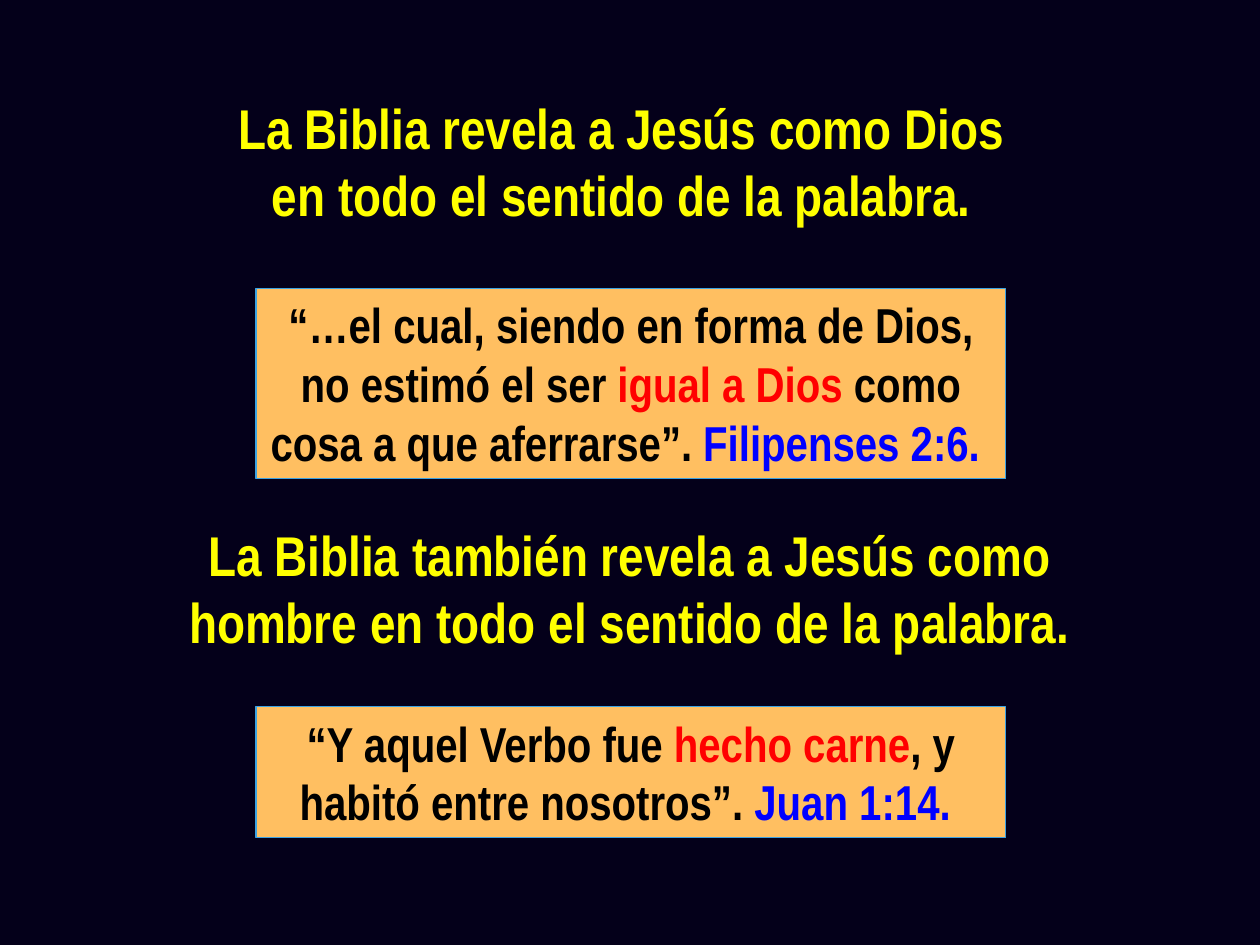
from typing import NamedTuple

from pptx import Presentation
from pptx.dml.color import RGBColor
from pptx.enum.shapes import MSO_SHAPE
from pptx.enum.text import MSO_ANCHOR, MSO_AUTO_SIZE, PP_ALIGN
from pptx.util import Pt

RECT = MSO_SHAPE.RECTANGLE
TOP = MSO_ANCHOR.TOP
GROW = MSO_AUTO_SIZE.SHAPE_TO_FIT_TEXT
CENTER = PP_ALIGN.CENTER

NAVY = RGBColor(0x04, 0x00, 0x1A)
YELLOW = RGBColor(0xFF, 0xFF, 0x00)
ORANGE = RGBColor(0xFF, 0xBF, 0x61)
SKY = RGBColor(0x3C, 0xA2, 0xE2)
BLACK = RGBColor(0x00, 0x00, 0x00)
RED = RGBColor(0xFF, 0x00, 0x00)
BLUE = RGBColor(0x00, 0x00, 0xFF)

FONT = "Arial Narrow"


class Box(NamedTuple):
    left: float
    top: float
    width: float
    height: float


class Span(NamedTuple):
    text: str
    color: RGBColor


class Verse(NamedTuple):
    top: float
    height: float
    spans: list[Span]


CLAIM_1 = "La Biblia revela a Jesús como Dios en todo el sentido de la palabra."
CLAIM_2 = ("La Biblia también revela a Jesús como hombre "
           "en todo el sentido de la palabra.")
VERSES = [
    Verse(164.9, 108.7, [
        Span("“…el cual, siendo en forma de Dios, no estimó el ser ", BLACK),
        Span("igual a Dios ", RED),
        Span("como cosa a que aferrarse”. ", BLACK),
        Span("Filipenses 2:6. ", BLUE),
    ]),
    Verse(403.9, 74.9, [
        Span("“Y aquel Verbo fue ", BLACK),
        Span("hecho carne", RED),
        Span(", y habitó entre nosotros”. ", BLACK),
        Span("Juan 1:14. ", BLUE),
    ]),
]


def write(shape, spans: list[Span], *, size: float, bold: bool = True) -> None:
    """Fill a shape with one centred paragraph of coloured spans."""
    frame = shape.text_frame
    frame.word_wrap = True
    frame.auto_size = GROW
    frame.vertical_anchor = TOP
    para = frame.paragraphs[0]
    para.alignment = CENTER
    for span in spans:
        run = para.add_run()
        run.text = span.text
        font = run.font
        font.name, font.size, font.bold = FONT, Pt(size), bold
        font.color.rgb = span.color


def place(shape, box: Box) -> None:
    shape.left, shape.top, shape.width, shape.height = map(Pt, box)


def add_verse(slide, verse: Verse) -> None:
    box = Box(146.2, verse.top, 428.4, verse.height)
    panel = slide.shapes.add_shape(RECT, *map(Pt, box))
    panel.shadow.inherit = False
    panel.fill.solid()
    panel.fill.fore_color.rgb = ORANGE
    panel.line.color.rgb = SKY
    panel.line.width = Pt(0.75)
    write(panel, verse.spans, size=28)


def main() -> None:
    deck = Presentation()
    deck.slide_width, deck.slide_height = Pt(720), Pt(540)
    slide = deck.slides.add_slide(deck.slide_layouts[5])
    slide.background.fill.solid()
    slide.background.fill.fore_color.rgb = NAVY

    # First claim and its verse
    title = slide.shapes.title
    place(title, Box(125.3, 49.7, 460.1, 85))
    write(title, [Span(CLAIM_1, YELLOW)], size=32)
    add_verse(slide, VERSES[0])

    # Second claim and its verse
    claim = slide.shapes.add_textbox(*map(Pt, Box(98.6, 293.8, 522.7, 85)))
    write(claim, [Span(CLAIM_2, YELLOW)], size=32)
    add_verse(slide, VERSES[1])

    deck.save("out.pptx")


if __name__ == "__main__":
    main()
